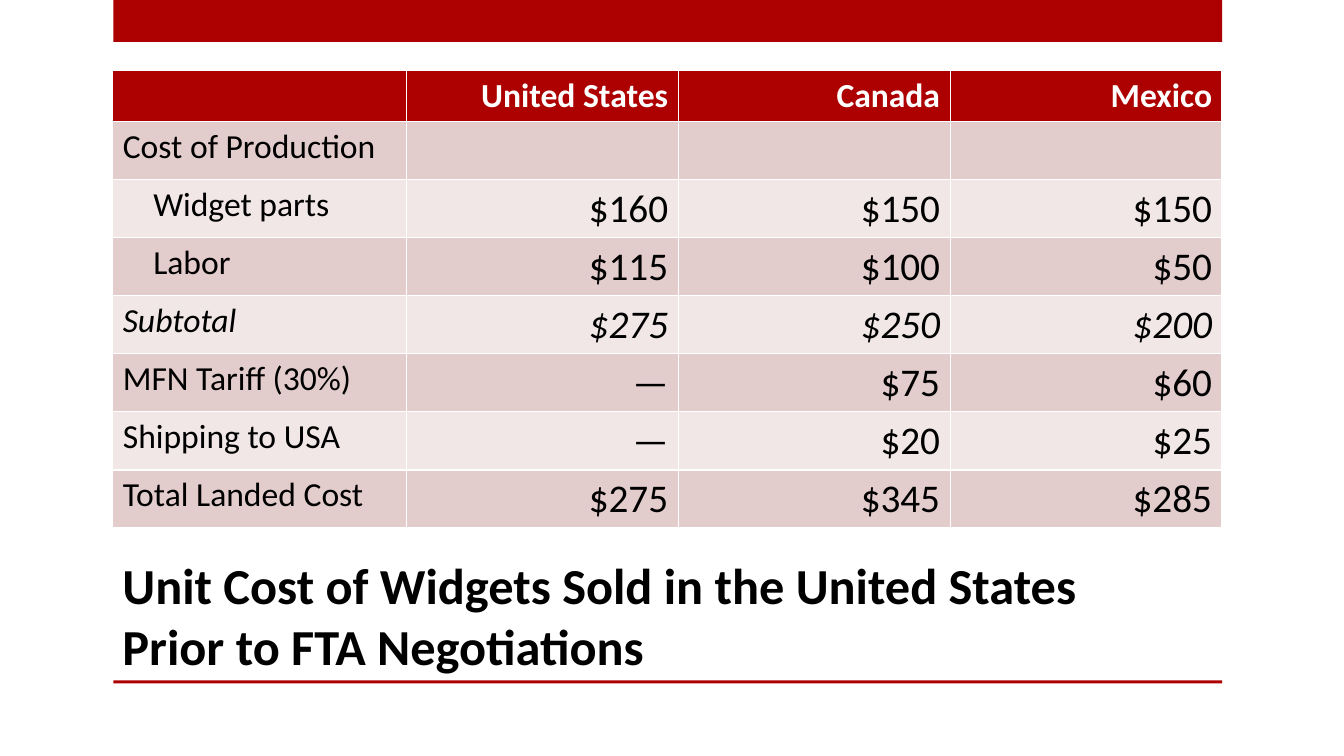
from dataclasses import dataclass

from pptx import Presentation
from pptx import util as u
from pptx.dml.color import RGBColor
from pptx.enum import shapes, text


@dataclass(frozen=True)
class Theme:
    font: str = "Calibri"
    red: str = "AD0101"
    black: str = "000000"
    white: str = "FFFFFF"
    bands: tuple = ("E3CCCC", "F1E7E7")
    title_size: int = 36
    label_size: int = 24
    amount_size: int = 28


THEME = Theme()
CELL_INSET = 10
LABEL_INDENT = 29
COLUMN_WIDTHS = (280, 259, 259, 259)
HEADER_HEIGHT = 49
ROW_HEIGHT = 55

COUNTRIES = ("United States", "Canada", "Mexico")
# Label, indent level, italic, amounts by country
COSTS = (
    ("Cost of Production", 0, False, ("", "", "")),
    ("Widget parts", 1, False, ("$160", "$150", "$150")),
    ("Labor", 1, False, ("$115", "$100", "$50")),
    ("Subtotal", 0, True, ("$275", "$250", "$200")),
    ("MFN Tariff (30%)", 0, False, ("—", "$75", "$60")),
    ("Shipping to USA", 0, False, ("—", "$20", "$25")),
    ("Total Landed Cost", 0, False, ("$275", "$345", "$285")),
)


def px(length):
    """Convert pixels, 96 to the inch, to EMU."""
    return u.Emu(length * 9525)


def style_paragraph(paragraph, size, color, bold=False, italic=False,
                    align=text.PP_ALIGN.LEFT):
    paragraph.alignment = align
    font = paragraph.font
    font.name = THEME.font
    font.size = u.Pt(size)
    font.bold = bold
    font.italic = italic
    font.color.rgb = RGBColor.from_string(color)


def add_bar(slide, top, height):
    bar = slide.shapes.add_shape(
        shapes.MSO_SHAPE.RECTANGLE, px(108), px(top), px(1056), px(height))
    bar.shadow.inherit = False
    bar.fill.solid()
    bar.fill.fore_color.rgb = RGBColor.from_string(THEME.red)
    bar.line.fill.background()


def place_title(slide, wording):
    title = slide.shapes.title
    title.left, title.top = px(107), px(480)
    title.width, title.height = px(1089), px(168)
    frame = title.text_frame
    frame.text = wording
    frame.word_wrap = True
    frame.auto_size = text.MSO_AUTO_SIZE.NONE
    frame.vertical_anchor = text.MSO_ANCHOR.BOTTOM
    style_paragraph(frame.paragraphs[0], THEME.title_size, THEME.black, bold=True)


def fill_cell(cell, wording, fill, indent=0, **style):
    cell.fill.solid()
    cell.fill.fore_color.rgb = RGBColor.from_string(fill)
    cell.margin_left = px(CELL_INSET + indent * LABEL_INDENT)
    cell.text = wording
    style_paragraph(cell.text_frame.paragraphs[0], **style)


def add_cost_table(slide):
    heights = [HEADER_HEIGHT] + [ROW_HEIGHT] * len(COSTS)
    table = slide.shapes.add_table(
        len(heights), len(COLUMN_WIDTHS), px(107), px(67),
        px(sum(COLUMN_WIDTHS)), px(sum(heights))).table
    for column, width in zip(table.columns, COLUMN_WIDTHS):
        column.width = px(width)
    for row, height in zip(table.rows, heights):
        row.height = px(height)

    for index, heading in enumerate(("",) + COUNTRIES):
        fill_cell(table.cell(0, index), heading, THEME.red,
                  size=THEME.label_size, color=THEME.white, bold=True,
                  align=text.PP_ALIGN.RIGHT)

    for number, (label, indent, italic, amounts) in enumerate(COSTS, start=1):
        band = THEME.bands[(number - 1) % 2]
        fill_cell(table.cell(number, 0), label, band, indent,
                  size=THEME.label_size, color=THEME.black, italic=italic)
        for index, amount in enumerate(amounts, start=1):
            fill_cell(table.cell(number, index), amount, band,
                      size=THEME.amount_size, color=THEME.black, italic=italic,
                      align=text.PP_ALIGN.RIGHT)


def main():
    presentation = Presentation()
    presentation.slide_width, presentation.slide_height = px(1280), px(720)
    slide = presentation.slides.add_slide(presentation.slide_layouts[5])
    add_bar(slide, top=0, height=40)
    add_bar(slide, top=648, height=3)
    place_title(slide, "Unit Cost of Widgets Sold in the United States\v"
                       "Prior to FTA Negotiations")
    add_cost_table(slide)
    presentation.save("out.pptx")


if __name__ == "__main__":
    main()
